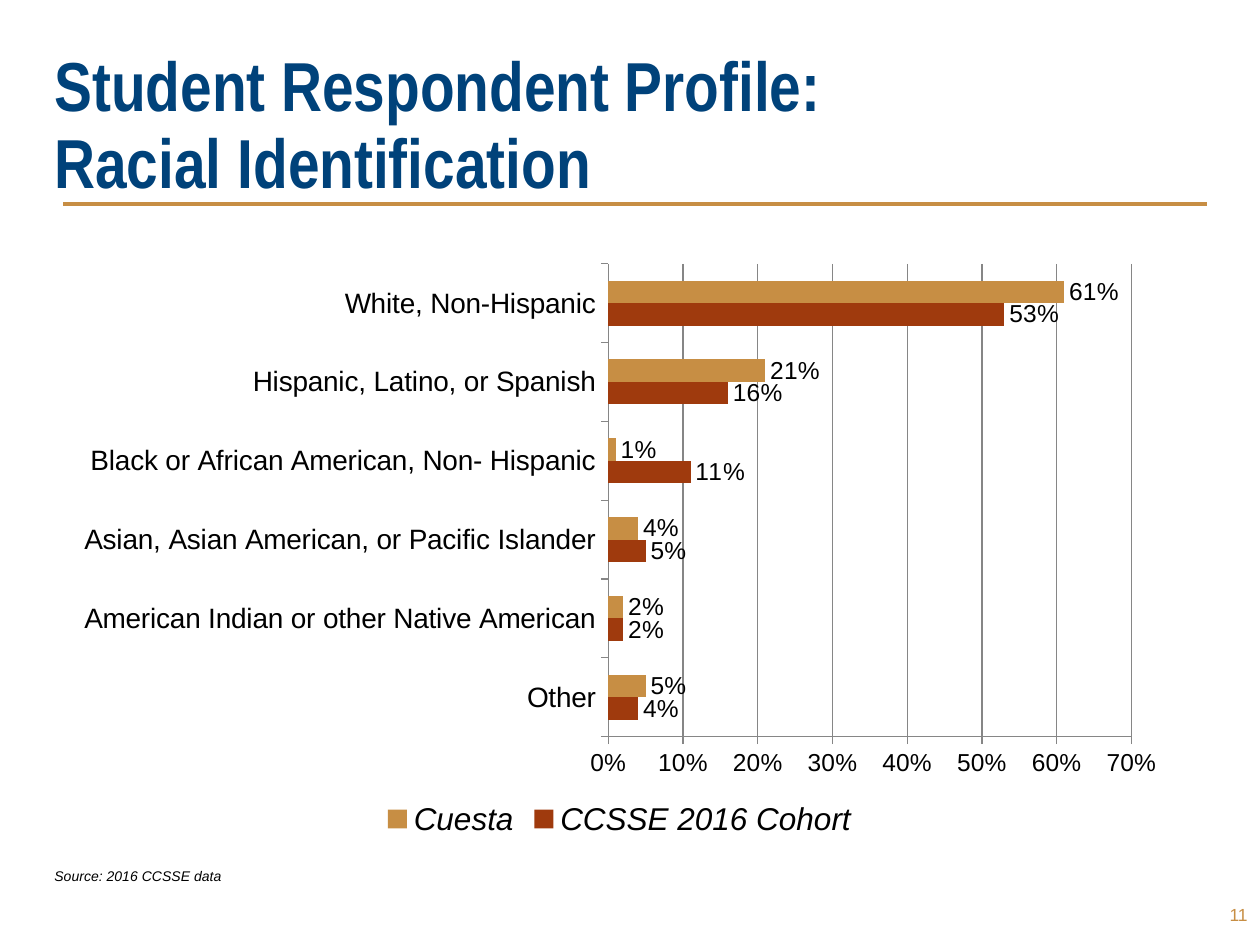
from lxml import etree
from pptx import Presentation
from pptx.chart.data import CategoryChartData as ChartData
from pptx.dml.color import RGBColor
from pptx.enum.chart import XL_CHART_TYPE as ChartType
from pptx.enum.chart import XL_LABEL_POSITION as LabelPosition
from pptx.enum.chart import XL_LEGEND_POSITION as LegendPosition
from pptx.enum.chart import XL_TICK_MARK as TickMark
from pptx.enum.shapes import MSO_CONNECTOR as Connector
from pptx.enum.text import MSO_ANCHOR as Anchor
from pptx.enum.text import PP_ALIGN as Align
from pptx.oxml import parse_xml
from pptx.oxml.ns import nsdecls, qn
from pptx.util import Inches, Pt

NAVY = RGBColor(0x00, 0x42, 0x7A)
GOLD = RGBColor(0xC7, 0x8E, 0x44)
RUST = RGBColor(0x9F, 0x3A, 0x0D)
BLACK = RGBColor(0x00, 0x00, 0x00)
GREY = RGBColor(0x86, 0x86, 0x86)

COLUMNS, ROWS = 120, 90

# Category, cohort share, college share (bottom bar first)
PROFILE = [
    ("Other", 0.04, 0.05),
    ("American Indian or other Native American", 0.02, 0.02),
    ("Asian, Asian American, or Pacific Islander", 0.05, 0.04),
    ("Black or African American, Non- Hispanic", 0.11, 0.01),
    ("Hispanic, Latino, or Spanish", 0.16, 0.21),
    ("White, Non-Hispanic", 0.53, 0.61),
]


class SlideBuilder:
    """Places styled elements on a grid of 120 columns by 90 rows."""

    body_font = "Arial"
    title_font = "Arial Narrow"

    def __init__(self, deck):
        self.slide = deck.slides.add_slide(deck.slide_layouts[6])
        self.column = deck.slide_width / COLUMNS
        self.row = deck.slide_height / ROWS

    def area(self, left, top, width, height):
        return (round(left * self.column), round(top * self.row),
                round(width * self.column), round(height * self.row))

    def style(self, font, size, color=BLACK, name=None, bold=False, italic=False):
        font.name = name or self.body_font
        font.size = Pt(size)
        font.color.rgb = color
        font.bold = bold
        font.italic = italic

    def text(self, place, lines, size, anchor=Anchor.TOP, align=Align.LEFT,
             spacing=None, **look):
        frame = self.slide.shapes.add_textbox(*self.area(*place)).text_frame
        frame.word_wrap = True
        frame.vertical_anchor = anchor
        para = frame.paragraphs[0]
        para.alignment = align
        if spacing:
            para.line_spacing = Pt(spacing)
        for index, line in enumerate(lines):
            if index:
                para.add_line_break()
            span = para.add_run()
            span.text = line
            self.style(span.font, size, **look)

    def rule(self, left, right, row, color, weight):
        x1, y, x2, _ = self.area(left, row, right, 0)
        line = self.slide.shapes.add_connector(Connector.STRAIGHT, x1, y, x2, y)
        line.line.color.rgb = color
        line.line.width = Pt(weight)
        etree.SubElement(line._element.spPr, qn("a:effectLst"))

    def bar_chart(self, place, names, colors, rows):
        data = ChartData(number_format="0%")
        data.categories = [row[0] for row in rows]
        for index, name in enumerate(names, start=1):
            data.add_series(name, [row[index] for row in rows])
        chart = self.slide.shapes.add_chart(
            ChartType.BAR_CLUSTERED, *self.area(*place), data).chart
        chart.has_title = False
        self.style(chart.font, 18)

        # Bars and their labels
        plot = chart.plots[0]
        plot.gap_width = 150
        plot.overlap = 0
        plot.vary_by_categories = False
        for series, color in zip(plot.series, colors):
            series.format.fill.solid()
            series.format.fill.fore_color.rgb = color
            labels = series.data_labels
            labels.show_value = True
            labels.number_format = "0%"
            labels.number_format_is_linked = False
            labels.position = LabelPosition.OUTSIDE_END
            self.style(labels.font, 14)

        # Axes
        for axis, size in ((chart.category_axis, 16), (chart.value_axis, 14)):
            axis.major_tick_mark = TickMark.OUTSIDE
            axis.minor_tick_mark = TickMark.NONE
            axis.format.line.color.rgb = GREY
            self.style(axis.tick_labels.font, size)
        scale = chart.value_axis
        scale.minimum_scale, scale.maximum_scale, scale.major_unit = 0, 0.7, 0.1
        scale.tick_labels.number_format = "0%"
        scale.tick_labels.number_format_is_linked = False
        scale.has_major_gridlines = True
        scale.major_gridlines.format.line.color.rgb = GREY

        # Legend
        chart.has_legend = True
        chart.legend.position = LegendPosition.BOTTOM
        chart.legend.include_in_layout = False
        self.style(chart.legend.font, 18, italic=True)
        self.plot_layout(chart, x=0.49, y=0.02, w=0.47, h=0.8)

    def plot_layout(self, chart, **shares):
        """Fixes the inner plot area as shares of the chart's size."""
        sizes = "".join(f'<c:{key} val="{share}"/>' for key, share in shares.items())
        layout = parse_xml(
            f'<c:layout {nsdecls("c")}><c:manualLayout><c:layoutTarget val="inner"/>'
            f'<c:xMode val="edge"/><c:yMode val="edge"/>{sizes}'
            '</c:manualLayout></c:layout>')
        area = chart._chartSpace.chart.plotArea
        for old in area.findall(qn("c:layout")):
            area.remove(old)
        area.insert(0, layout)


def main():
    deck = Presentation()
    deck.slide_width, deck.slide_height = Inches(10), Inches(7.5)
    page = SlideBuilder(deck)

    # Heading
    page.rule(6, 115, 19.44, GOLD, 2.25)
    page.text((4, 6.4, 112, 13.5),
              ["Student Respondent Profile:", "Racial Identification"], 39.6,
              anchor=Anchor.BOTTOM, spacing=44, color=NAVY,
              name=page.title_font, bold=True)

    # Chart
    page.bar_chart((6, 24, 106, 56.3), ["CCSSE 2016 Cohort", "Cuesta"],
                   [RUST, GOLD], PROFILE)

    # Source and page number
    page.text((4, 82, 24, 2.9), ["Source: 2016 CCSSE data"], 8, italic=True)
    page.text((112, 85, 8, 4.2), ["11"], 10, anchor=Anchor.MIDDLE,
              align=Align.RIGHT, color=GOLD)

    deck.save("out.pptx")


if __name__ == "__main__":
    main()
